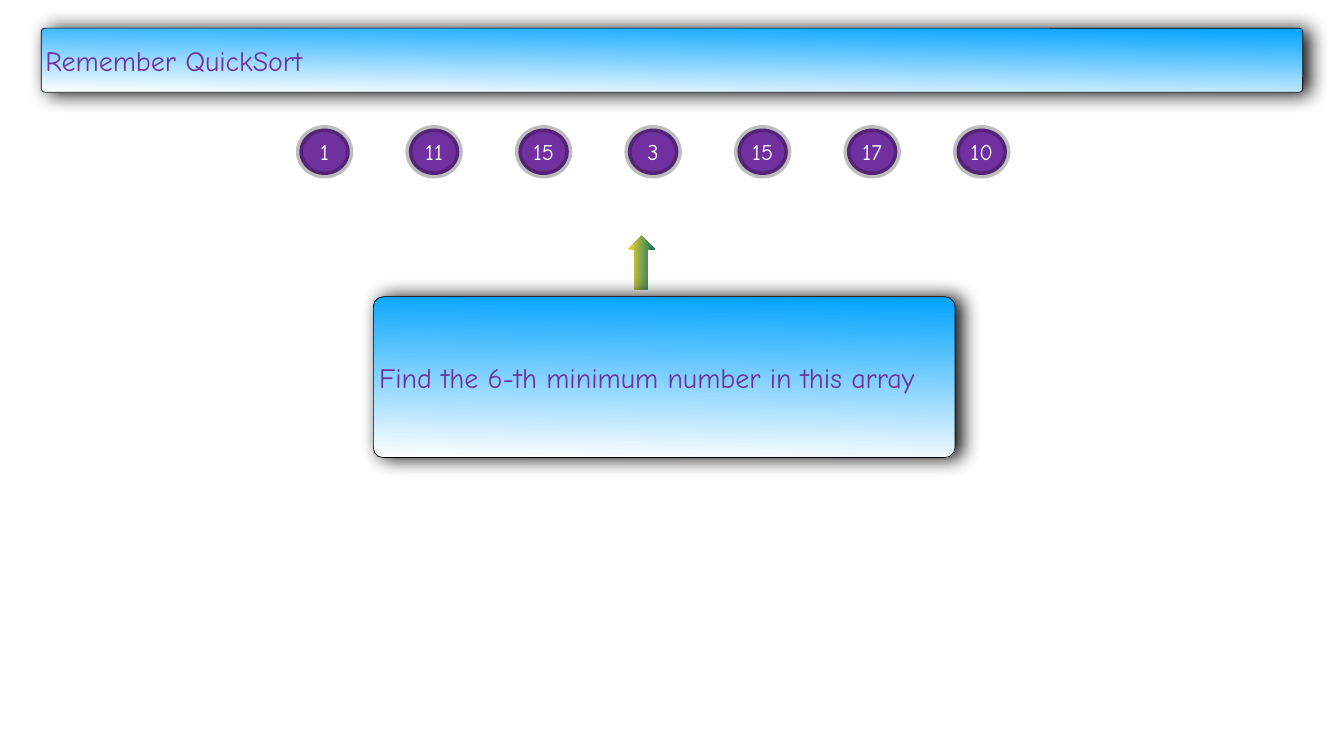
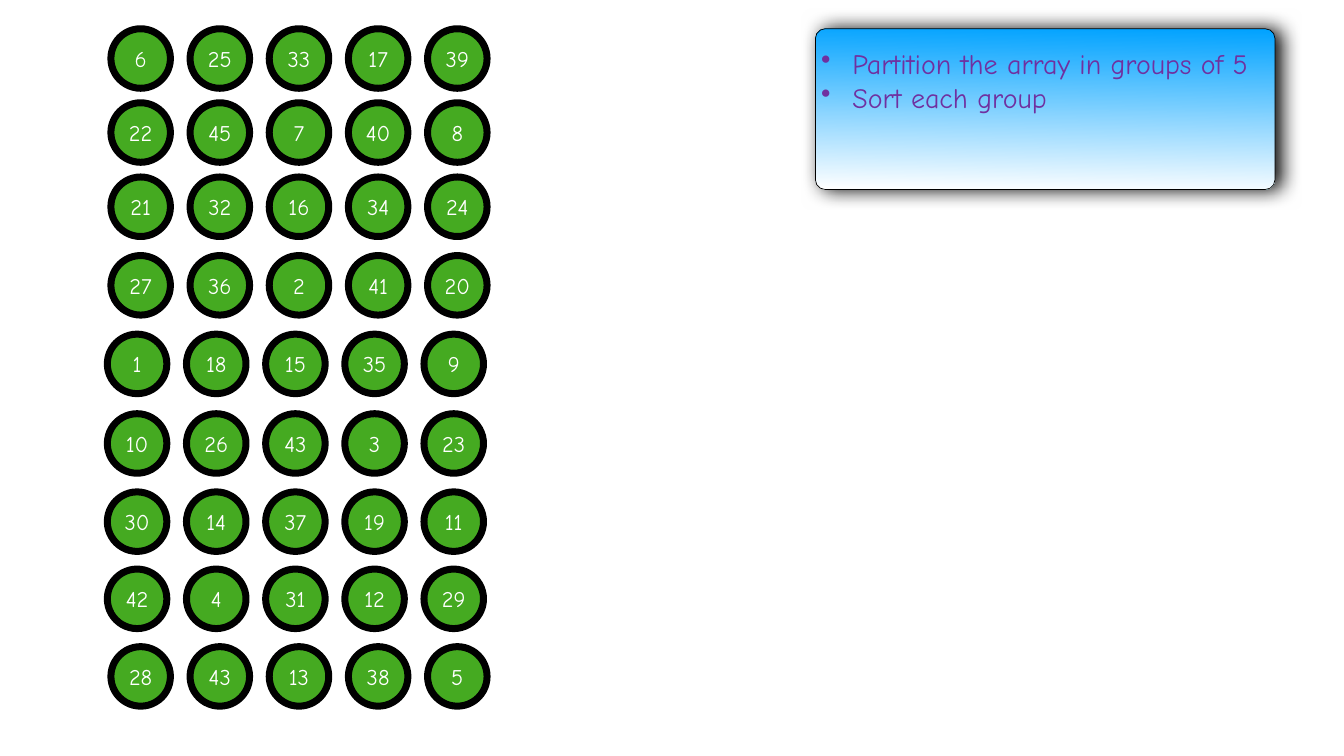
from lxml.etree import SubElement
from pptx import Presentation
from pptx.dml.color import RGBColor
from pptx.enum.shapes import MSO_SHAPE
from pptx.enum.text import MSO_ANCHOR, MSO_AUTO_SIZE, PP_ALIGN
from pptx.oxml.ns import qn
from pptx.util import Cm, Pt

FONT = "Comic Neue"
PURPLE, GREEN, BLUE = "7030A0", "45AA21", "00A2FF"
YELLOW, TEAL = "FFD932", "0B7468"
WHITE, BLACK = "FFFFFF", "000000"
INSET = Cm(0.15)

QUICKSORT_NUMBERS = [1, 11, 15, 3, 15, 17, 10]

# Each group: left edge and top edge in centimetres, then its five numbers
GROUPS = [
    (5.59, 1.45, [6, 25, 33, 17, 39]),
    (5.59, 5.18, [22, 45, 7, 40, 8]),
    (5.59, 8.92, [21, 32, 16, 34, 24]),
    (5.59, 12.88, [27, 36, 2, 41, 20]),
    (5.41, 16.84, [1, 18, 15, 35, 9]),
    (5.41, 20.85, [10, 26, 43, 3, 23]),
    (5.41, 24.79, [30, 14, 37, 19, 11]),
    (5.41, 28.68, [42, 4, 31, 12, 29]),
    (5.59, 32.59, [28, 43, 13, 38, 5]),
]


def rgb(color):
    return RGBColor.from_string(color)


def add_plain_shape(slide, kind, left, top, width, height):
    """Add a preset shape without shadow, measured in centimetres."""
    shape = slide.shapes.add_shape(kind, Cm(left), Cm(top), Cm(width), Cm(height))
    shape.shadow.inherit = False
    return shape


def set_line(shape, width, opacity=100):
    shape.line.color.rgb = rgb(BLACK)
    shape.line.width = Pt(width)
    if opacity < 100:
        color = shape.line._ln.find(".//" + qn("a:srgbClr"))
        SubElement(color, qn("a:alpha"), val=str(opacity * 1000))


def set_gradient(shape, first, last, last_position=1.0):
    shape.fill.gradient()
    shape.fill.gradient_angle = 269
    start, end = shape.fill.gradient_stops
    start.color.rgb = rgb(first)
    end.color.rgb = rgb(last)
    end.position = last_position


def add_soft_shadow(shape):
    effects = shape._element.spPr.find(qn("a:effectLst"))
    shadow = SubElement(effects, qn("a:outerShdw"), blurRad=str(Pt(28)),
                        dist=str(Pt(9)), dir="0", rotWithShape="0")
    color = SubElement(shadow, qn("a:srgbClr"), val=BLACK)
    SubElement(color, qn("a:alpha"), val="97000")


def add_bullet(paragraph):
    properties = paragraph._p.get_or_add_pPr()
    properties.set("marL", str(Cm(1.57)))
    properties.set("indent", str(-Cm(1.57)))
    SubElement(properties, qn("a:buChar"), char="•")


def write_lines(shape, lines, size, color, alignment, bulleted=False):
    frame = shape.text_frame
    frame.word_wrap = True
    frame.vertical_anchor = MSO_ANCHOR.MIDDLE
    frame.margin_left = frame.margin_right = INSET
    frame.margin_top = frame.margin_bottom = INSET
    frame.text = "\n".join(lines)
    for paragraph in frame.paragraphs:
        paragraph.alignment = alignment
        if bulleted:
            add_bullet(paragraph)
        paragraph.font.name = FONT
        paragraph.font.size = Pt(size)
        paragraph.font.color.rgb = rgb(color)


def add_panel(slide, left, top, width, height, lines, bulleted=False):
    """Add a blue-to-white rounded panel with purple text."""
    panel = add_plain_shape(slide, MSO_SHAPE.ROUNDED_RECTANGLE, left, top, width, height)
    panel.adjustments[0] = 0.06
    set_gradient(panel, BLUE, WHITE)
    set_line(panel, 1)
    add_soft_shadow(panel)
    write_lines(panel, lines, 40, PURPLE, PP_ALIGN.LEFT, bulleted)
    return panel


def add_number_row(slide, left, top, pitch, width, height, numbers, fill, line_opacity=100):
    """Add a row of equally spaced ovals, one for each number."""
    for column, number in enumerate(numbers):
        oval = add_plain_shape(slide, MSO_SHAPE.OVAL, left + column * pitch, top, width, height)
        oval.fill.solid()
        oval.fill.fore_color.rgb = rgb(fill)
        set_line(oval, 10, line_opacity)
        write_lines(oval, [str(number)], 32, WHITE, PP_ALIGN.CENTER)
        oval.text_frame.auto_size = MSO_AUTO_SIZE.SHAPE_TO_FIT_TEXT


def add_up_arrow(slide, left, top, width, height):
    arrow = add_plain_shape(slide, MSO_SHAPE.RIGHT_ARROW, left, top, width, height)
    arrow.rotation = 270
    set_gradient(arrow, YELLOW, TEAL, 0.99)
    arrow.line.fill.background()


def build_quicksort_slide(slide):
    add_panel(slide, 2.08, 1.42, 63.58, 3.23, ["Remember QuickSort"])
    add_number_row(slide, 15.09, 6.48, 5.52, 2.54, 2.34, QUICKSORT_NUMBERS, PURPLE, 26)
    add_up_arrow(slide, 30.96, 12.57, 2.72, 1.35)
    add_panel(slide, 18.82, 14.96, 29.31, 8.1, ["Find the 6-th minimum number in this array"])


def build_groups_slide(slide):
    for left, top, numbers in GROUPS:
        add_number_row(slide, left, top, 3.99, 3, 3, numbers, GREEN)
    steps = add_panel(slide, 41.1, 1.45, 23.16, 8.1,
                      ["Partition the array in groups of 5", "Sort each group"], bulleted=True)
    steps.text_frame.vertical_anchor = MSO_ANCHOR.TOP
    steps.text_frame.margin_top = Cm(0.75)


def main():
    presentation = Presentation()
    presentation.slide_width = Cm(67.74)
    presentation.slide_height = Cm(38.1)
    blank = presentation.slide_layouts[6]
    for build in (build_quicksort_slide, build_groups_slide):
        build(presentation.slides.add_slide(blank))
    presentation.save("out.pptx")


if __name__ == "__main__":
    main()
